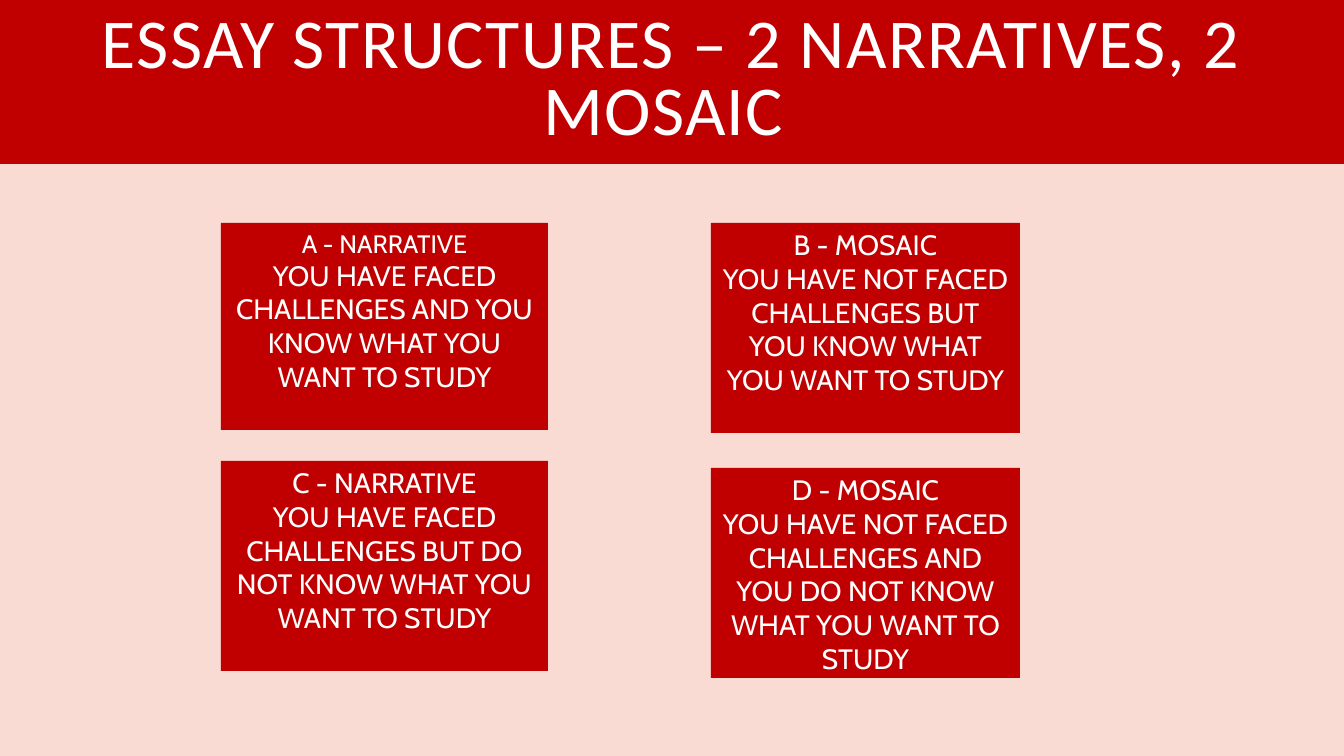
from pptx import Presentation
from pptx.dml.color import RGBColor
from pptx.enum.shapes import MSO_SHAPE
from pptx.enum.text import MSO_ANCHOR, MSO_AUTO_SIZE, PP_ALIGN
from pptx.util import Pt

RED, PINK, WHITE = "C00000", "FADBD3", "FFFFFF"
TITLE = "ESSAY STRUCTURES – 2 NARRATIVES, 2 MOSAIC"
TITLE_HEIGHT = 164
NARRATIVE_COLUMN = (221, 327)  # left, width
MOSAIC_COLUMN = (711, 309)
# column, top, height, heading, heading size, description
ESSAYS = [
    (NARRATIVE_COLUMN, 223, 207, "A - NARRATIVE", 18,
     "YOU HAVE FACED CHALLENGES AND YOU KNOW WHAT YOU WANT TO STUDY"),
    (MOSAIC_COLUMN, 223, 210, "B - MOSAIC", 20,
     "YOU HAVE NOT FACED CHALLENGES BUT YOU KNOW WHAT YOU WANT TO STUDY"),
    (NARRATIVE_COLUMN, 461, 210, "C - NARRATIVE", 20,
     "YOU HAVE FACED CHALLENGES BUT DO NOT KNOW WHAT YOU WANT TO STUDY"),
    (MOSAIC_COLUMN, 468, 210, "D - MOSAIC", 20,
     "YOU HAVE NOT FACED CHALLENGES AND YOU DO NOT KNOW WHAT YOU WANT TO STUDY"),
]
WIDTH, HEIGHT = 1344, 756


def px(n):
    return round(n * 914400 / 100.8)


def paint(fill, color):
    fill.solid()
    fill.fore_color.rgb = RGBColor.from_string(color)


def write(p, text, font, size):
    """Set a centred white paragraph and return its run."""
    p.text = text
    p.alignment = PP_ALIGN.CENTER
    r = p.runs[0]
    r.font.name, r.font.size = font, Pt(size)
    r.font.color.rgb = RGBColor.from_string(WHITE)
    return r


prs = Presentation()
prs.slide_width, prs.slide_height = px(WIDTH), px(HEIGHT)
slide = prs.slides.add_slide(prs.slide_layouts[5])
paint(slide.background.fill, PINK)

title = slide.shapes.title
title.left, title.top, title.width, title.height = 0, 0, px(WIDTH), px(TITLE_HEIGHT)
paint(title.fill, RED)
tf = title.text_frame
tf.auto_size = MSO_AUTO_SIZE.NONE
tf.vertical_anchor = MSO_ANCHOR.MIDDLE
r = write(tf.paragraphs[0], TITLE + " ", "Calibri", 50)
r.font._element.set("spc", "100")
tf.paragraphs[0].line_spacing = 0.8

for (left, width), top, height, heading, size, description in ESSAYS:
    sp = slide.shapes.add_shape(MSO_SHAPE.RECTANGLE, px(left), px(top), px(width), px(height))
    sp.shadow.inherit = False
    paint(sp.fill, RED)
    sp.line.fill.background()
    tf = sp.text_frame
    tf.word_wrap = True
    tf.vertical_anchor = MSO_ANCHOR.TOP
    write(tf.paragraphs[0], heading, "Cabin", size)
    write(tf.add_paragraph(), description, "Cabin", 20)

prs.save("out.pptx")
